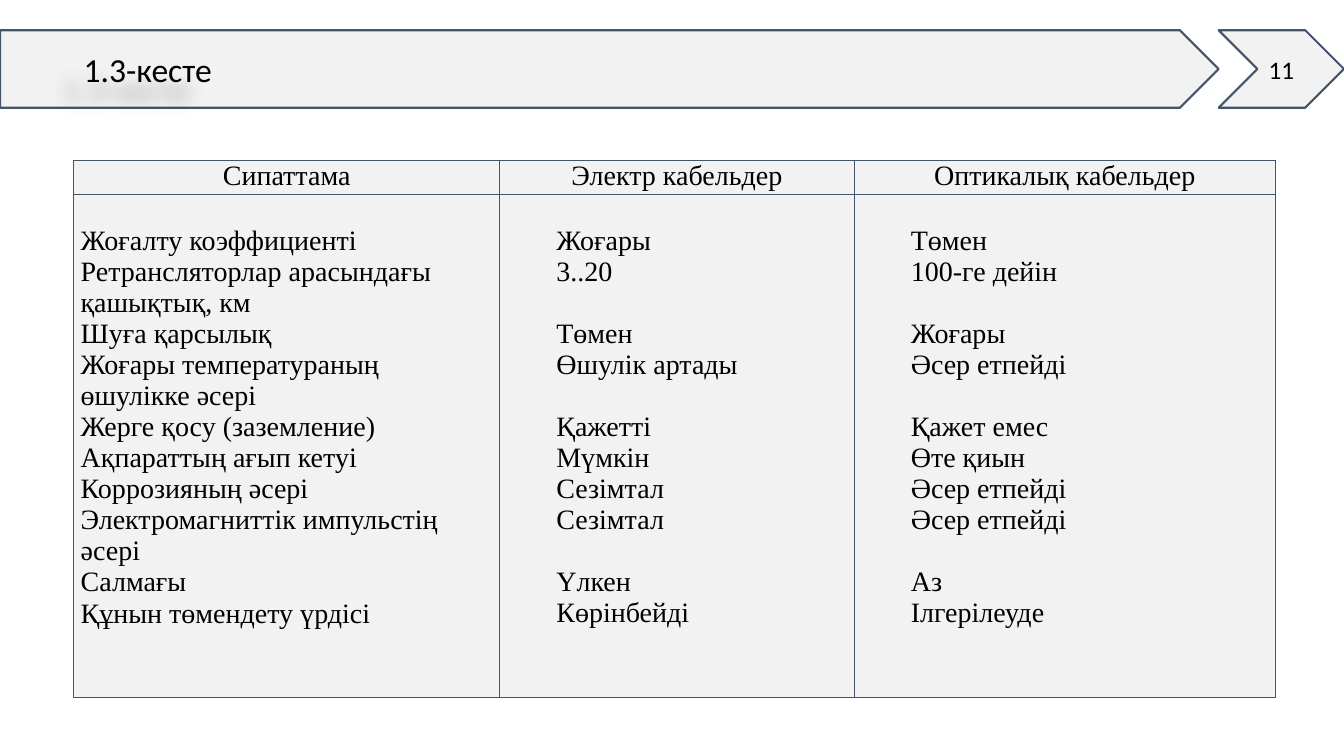
from lxml.etree import SubElement as Sub
from pptx import Presentation
from pptx.dml.color import RGBColor as Rgb
from pptx.enum.shapes import MSO_SHAPE as Kind
from pptx.enum.text import MSO_ANCHOR as Anchor, MSO_AUTO_SIZE as Auto, PP_ALIGN as Align
from pptx.oxml.ns import qn
from pptx.util import Pt

HEADS = ["Сипаттама", "Электр кабельдер", "Оптикалық кабельдер"]
ROWS = [
    ("Жоғалту коэффициенті", "Жоғары", "Төмен", 1),
    ("Ретрансляторлар арасындағы қашықтық, км", "3..20", "100-ге дейін", 2),
    ("Шуға қарсылық", "Төмен", "Жоғары", 1),
    ("Жоғары температураның өшулікке әсері", "Өшулік артады", "Әсер етпейді", 2),
    ("Жерге қосу (заземление)", "Қажетті", "Қажет емес", 1),
    ("Ақпараттың ағып кетуі", "Мүмкін", "Өте қиын", 1),
    ("Коррозияның әсері", "Сезімтал", "Әсер етпейді", 1),
    ("Электромагниттік импульстің әсері", "Сезімтал", "Әсер етпейді", 2),
    ("Салмағы", "Үлкен", "Аз", 1),
    ("Құнын төмендету үрдісі", "Көрінбейді", "Ілгерілеуде", 1),
]


def color(code):
    return Rgb.from_string(code)


def write(para, text, size=20, font="Times New Roman", align=Align.LEFT,
          before=0, indent=0):
    para.alignment = align
    para.space_before = Pt(before)
    if indent:
        para._p.get_or_add_pPr().set("indent", str(Pt(indent)))
    run = para.add_run()
    run.text = text
    run.font.size = Pt(size)
    run.font.name = font
    run.font.color.rgb = color("000000")


class Deck:
    """Hold the style and the current slide."""

    fill, edge, sans = "F2F2F2", "44546A", "Calibri"
    line, inset, indent = 22.15, 5, 35.4

    def __init__(self, wide, high):
        self.show = Presentation()
        self.show.slide_width, self.show.slide_height = Pt(wide), Pt(high)
        self.slide = self.show.slides.add_slide(self.show.slide_layouts[6])

    def arrow(self, kind, box, text=""):
        shape = self.slide.shapes.add_shape(kind, *map(Pt, box))
        shape.shadow.inherit = False
        shape.fill.solid()
        shape.fill.fore_color.rgb = color(self.fill)
        shape.line.color.rgb = color(self.edge)
        shape.line.width = Pt(1.5)
        if text:
            frame = shape.text_frame
            frame.vertical_anchor = Anchor.MIDDLE
            write(frame.paragraphs[0], text, size=18, font=self.sans, align=Align.CENTER)

    def title(self, box, text):
        shape = self.slide.shapes.add_textbox(*map(Pt, box))
        frame = shape.text_frame
        frame.word_wrap = True
        frame.auto_size = Auto.SHAPE_TO_FIT_TEXT
        write(frame.paragraphs[0], text, size=24, font=self.sans)
        glow = Sub(Sub(shape._element.spPr, qn("a:effectLst")), qn("a:outerShdw"),
                   blurRad=str(Pt(12)), dist=str(Pt(20)), dir="8400000",
                   algn="ctr", rotWithShape="0")
        tone = Sub(glow, qn("a:srgbClr"), val="000000")
        Sub(tone, qn("a:alpha"), val="30000")

    def style(self, cell):
        cell.margin_left = cell.margin_right = Pt(self.inset)
        cell.margin_top = cell.margin_bottom = 0
        props = cell._tc.get_or_add_tcPr()
        for side in ("lnL", "lnR", "lnT", "lnB"):
            rule = Sub(props, qn(f"a:{side}"), w=str(Pt(1)))
            Sub(Sub(rule, qn("a:solidFill")), qn("a:srgbClr"), val=self.edge)
        cell.fill.solid()
        cell.fill.fore_color.rgb = color(self.fill)

    def column(self, cell, col):
        cell.margin_top = Pt(self.line)
        frame = cell.text_frame
        gap = 0
        for n, row in enumerate(ROWS):
            para = frame.add_paragraph() if n else frame.paragraphs[0]
            write(para, row[col], before=gap, indent=self.indent if col else 0)
            gap = self.line * (row[3] - 1) if col else 0

    def table(self, left, top, cols, rows):
        box = map(Pt, (left, top, sum(cols), sum(rows)))
        grid = self.slide.shapes.add_table(len(rows), len(cols), *box).table
        grid.first_row = grid.horz_banding = False
        for row, high in zip(grid.rows, rows):
            row.height = Pt(high)
        for col, wide in enumerate(cols):
            grid.columns[col].width = Pt(wide)
            head, body = grid.cell(0, col), grid.cell(1, col)
            self.style(head)
            self.style(body)
            write(head.text_frame.paragraphs[0], HEADS[col], align=Align.CENTER)
            self.column(body, col)


def main():
    deck = Deck(960, 540)
    deck.arrow(Kind.PENTAGON, (0, 21.6, 870.5, 55.4))
    deck.title((52.6, 31.7, 797.8, 36), "1.3-кесте")
    deck.arrow(Kind.CHEVRON, (870.5, 21.6, 89.5, 55.4), "11")
    deck.table(52.6, 114.5, (304.4, 253.2, 300.8), (24.2, 359.6))
    deck.show.save("out.pptx")


if __name__ == "__main__":
    main()
